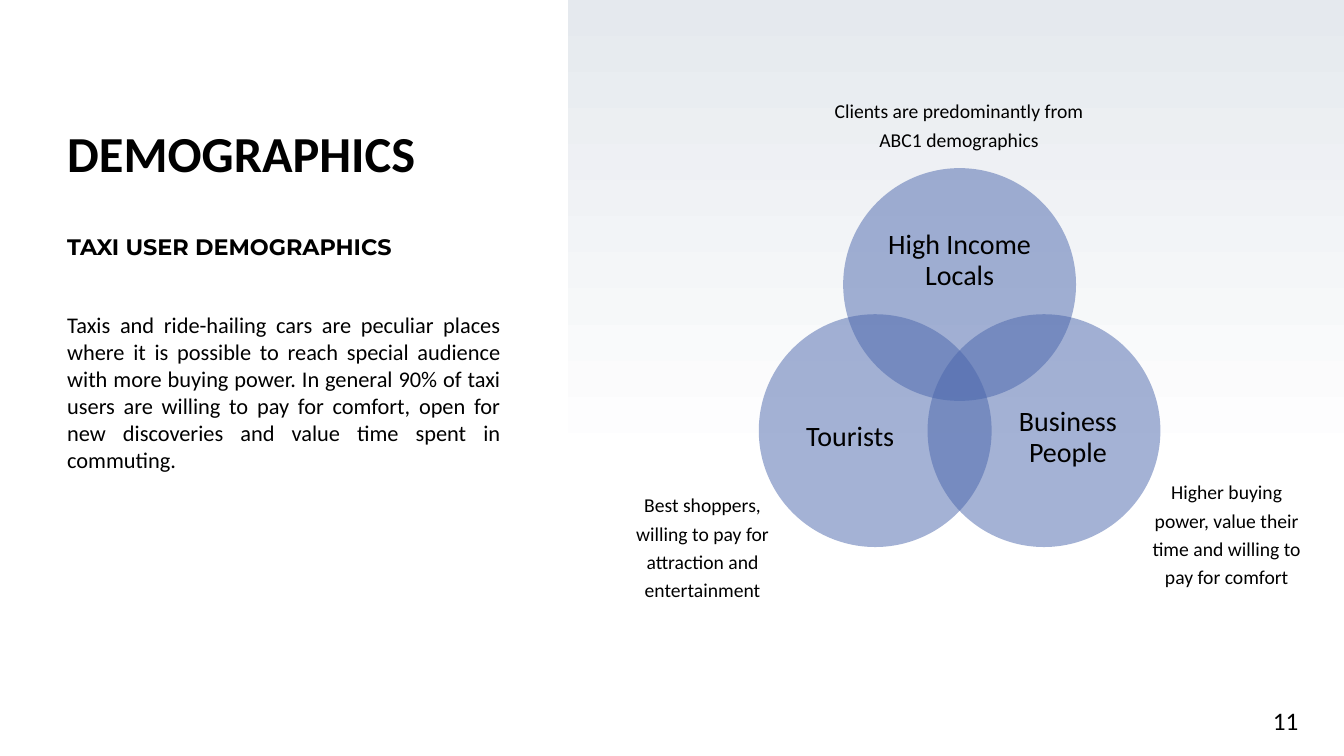
from math import cos, radians, sin

from pptx import Presentation
from pptx.dml.color import RGBColor
from pptx.enum.shapes import MSO_SHAPE
from pptx.enum.text import MSO_ANCHOR, PP_ALIGN
from pptx.oxml.ns import qn
from pptx.util import Inches, Pt

RECT, OVAL = MSO_SHAPE.RECTANGLE, MSO_SHAPE.OVAL
TOP, MID, LOW = MSO_ANCHOR.TOP, MSO_ANCHOR.MIDDLE, MSO_ANCHOR.BOTTOM
LEFT, MEAN, RIGHT, FULL = (PP_ALIGN.LEFT, PP_ALIGN.CENTER,
                           PP_ALIGN.RIGHT, PP_ALIGN.JUSTIFY)

COLS, ROWS = 40, 22.5
CELL = Inches(13.33) / COLS
BODY, HEAD = "Calibri", "Montserrat"
INK, WHITE, MIST, BLUE = "000000", "FFFFFF", "E5E9EE", "4A66AC"

# Left text column and the ring of circles, in grid cells
EDGE, SPAN = 2, 12.9
HUB, REACH, SIZE = (28.56, 11.37), 2.9, 6.93

GROUPS = [
    # angle, label, label box, note, note box
    (-90, "High Income Locals", (26.01, 6.21, 5.1, 3.12),
     "Clients are predominantly from ABC1 demographics",
     (24.18, 2.67, 8.73, 1.95)),
    (30, "Business People", (29.7, 11.13, 4.17, 3.81),
     "Higher buying power, value their time and willing to pay for comfort",
     (33.78, 14.01, 5.46, 3.63)),
    (150, "Tourists", (23.22, 11.13, 4.17, 3.81),
     "Best shoppers, willing to pay for attraction and entertainment",
     (18.18, 14.4, 5.46, 3.63)),
]

STORY = ("Taxis and ride-hailing cars are peculiar places where it is possible "
         "to reach special audience with more buying power. In general 90% of "
         "taxi users are willing to pay for comfort, open for new discoveries "
         "and value time spent in commuting.")


def tint(code):
    return RGBColor.from_string(code)


def apply(item, values):
    for name, value in values.items():
        setattr(item, name, value)


class Page:
    """Draws on one slide; boxes are (column, row, columns, rows)."""

    def __init__(self, deck):
        self.slide = deck.slides.add_slide(deck.slide_layouts[6])
        self.shapes = self.slide.shapes

    def place(self, box):
        return [round(part * CELL) for part in box]

    def fade(self, first, last, stop):
        """Fill the background from the top down, ending at the share stop."""
        fill = self.slide.background.fill
        fill.gradient()
        fill.gradient_angle = 270
        for mark, code, share in zip(fill.gradient_stops,
                                     (first, last), (0, stop)):
            mark.color.rgb = tint(code)
            mark.position = share

    def shape(self, kind, box, code, alpha=100):
        item = self.shapes.add_shape(kind, *self.place(box))
        item.shadow.inherit = False
        item.line.fill.background()
        item.fill.solid()
        item.fill.fore_color.rgb = tint(code)
        if alpha < 100:
            color = next(item.element.iter(qn("a:srgbClr")))
            color.makeelement(qn("a:alpha"))
            node = color.makeelement(qn("a:alpha"), {"val": str(alpha * 1000)})
            color.append(node)

    def text(self, words, box, size, align=LEFT, anchor=TOP, space=1.0,
             pad=(0, 0.05), face=BODY, bold=False):
        frame = self.shapes.add_textbox(*self.place(box)).text_frame
        side, end = map(Inches, pad)
        apply(frame, dict(word_wrap=True, vertical_anchor=anchor,
                          margin_left=side, margin_right=side,
                          margin_top=end, margin_bottom=end))
        para = frame.paragraphs[0]
        apply(para, dict(text=words, alignment=align, line_spacing=space))
        apply(para.font, dict(name=face, size=Pt(size), bold=bold))
        para.font.color.rgb = tint(INK)

    def disc(self, angle):
        """Draw one circle of the ring at an angle in degrees."""
        turn = radians(angle)
        left = HUB[0] + REACH * cos(turn) - SIZE / 2
        top = HUB[1] + REACH * sin(turn) - SIZE / 2
        self.shape(OVAL, (left, top, SIZE, SIZE), BLUE, alpha=50)


def main():
    deck = Presentation()
    deck.slide_width, deck.slide_height = Inches(13.33), Inches(7.5)
    page = Page(deck)

    page.fade(MIST, WHITE, 0.62)
    page.shape(RECT, (0, 0, 16.9, ROWS), WHITE)

    page.text("DEMOGRAPHICS", (EDGE, 1.71, SPAN, 3.9), 36,
              anchor=LOW, space=0.9, bold=True)
    page.text("TAXI USER DEMOGRAPHICS", (EDGE, 6.78, SPAN, 2.34), 16,
              align=FULL, face=HEAD, bold=True)
    page.text(STORY, (EDGE, 9.12, SPAN, 8.19), 16, align=FULL)
    page.text("11", (29.94, 20.85, 9, 1.2), 18, align=RIGHT, pad=(0.1, 0.05))

    for angle, label, spot, note, box in GROUPS:
        page.disc(angle)
        page.text(label, spot, 20, align=MEAN, anchor=MID, space=0.9,
                  pad=(0, 0))
        page.text(note, box, 14, align=MEAN, space=1.2, pad=(0.1, 0.05))

    deck.save("out.pptx")


if __name__ == "__main__":
    main()
